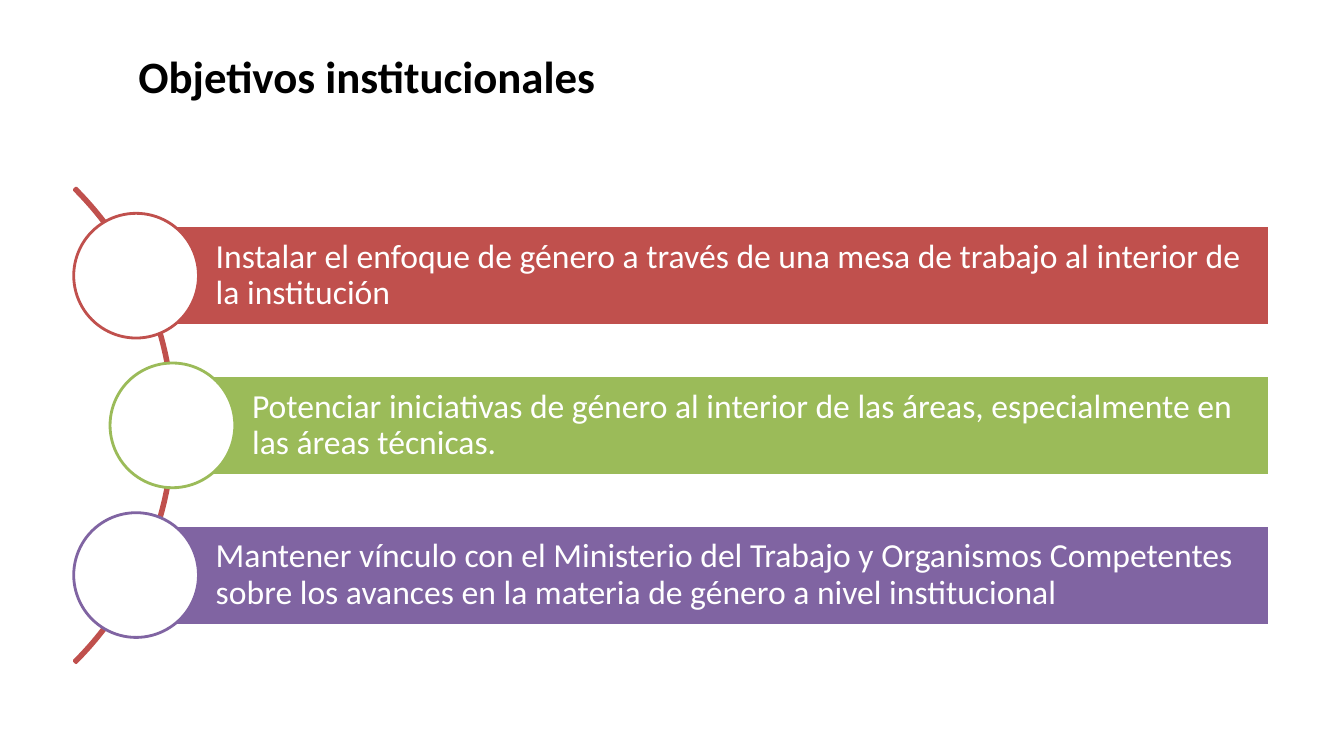
from pptx import Presentation
from pptx.dml.color import RGBColor
from pptx.enum.shapes import MSO_SHAPE
from pptx.enum.text import MSO_ANCHOR, PP_ALIGN
from pptx.util import Inches, Pt

GOALS = [
    ("Instalar el enfoque de género a través de una mesa de trabajo al interior de la institución",
     "C0504D", 0),
    ("Potenciar iniciativas de género al interior de las áreas, especialmente en las áreas técnicas.",
     "9BBB59", 0.36),
    ("Mantener vínculo con el Ministerio del Trabajo y Organismos Competentes "
     "sobre los avances en la materia de género a nivel institucional",
     "8064A2", 0),
]


def color(code):
    return RGBColor.from_string(code)


def assign(item, values):
    for name, value in values.items():
        setattr(item, name, value)


def write(frame, text, font, para, body):
    assign(frame, {"word_wrap": True, "vertical_anchor": MSO_ANCHOR.MIDDLE, **body})
    line = frame.paragraphs[0]
    assign(line, para)
    run = line.add_run()
    run.text = text
    code = font.pop("code")
    assign(run.font, {"name": "Calibri", **font})
    run.font.color.rgb = color(code)


def draw(slide, kind, box, fill, edge):
    shape = slide.shapes.add_shape(kind, *map(Inches, box))
    shape.shadow.inherit = False
    if fill:
        shape.fill.solid()
        shape.fill.fore_color.rgb = color(fill)
    else:
        shape.fill.background()
    shape.line.color.rgb = color(edge)
    shape.line.width = Pt(2)
    return shape


def add_title(slide, box):
    frame = slide.shapes.add_textbox(*map(Inches, box)).text_frame
    write(frame, "Objetivos institucionales",
          {"size": Pt(32), "bold": True, "code": "000000"},
          {"alignment": PP_ALIGN.CENTER}, {})


def add_arc(slide, box):
    arc = draw(slide, MSO_SHAPE.BLOCK_ARC, box, None, "C0504D")
    # Start angle, end angle and band thickness
    for i, value in enumerate((189, 27, 0.004)):
        arc.adjustments[i] = value


def add_goal(slide, box, text, code):
    left, top, width, height = box
    # Bar with its text
    bar = draw(slide, MSO_SHAPE.RECTANGLE, box, code, "FFFFFF")
    pad = Inches(0.07)
    write(bar.text_frame, text, {"size": Pt(24), "code": "FFFFFF"},
          {"alignment": PP_ALIGN.LEFT, "line_spacing": 0.9},
          {"margin_left": Inches(0.79), "margin_right": pad,
           "margin_top": pad, "margin_bottom": pad})
    # Circle centred on the left edge of the bar
    size = 1.25 * height
    ring = (left - size / 2, top + (height - size) / 2, size, size)
    draw(slide, MSO_SHAPE.OVAL, ring, "FFFFFF", code)


def add_list(slide, box):
    left, top, width, height = box
    tall = 0.99
    step = (height - tall) / (len(GOALS) - 1)
    for i, (text, code, shift) in enumerate(GOALS):
        add_goal(slide, (left + shift, top + i * step, width - shift, tall), text, code)


def main():
    deck = Presentation()
    assign(deck, {"slide_width": Inches(13.33), "slide_height": Inches(7.5)})
    slide = deck.slides.add_slide(deck.slide_layouts[6])
    add_title(slide, (-2.36, 0.12, 12, 1.25))
    add_arc(slide, (-4.93, 0.89, 6.66, 6.66))
    add_list(slide, (1.35, 2.24, 11.24, 3.96))
    deck.save("out.pptx")


if __name__ == "__main__":
    main()
